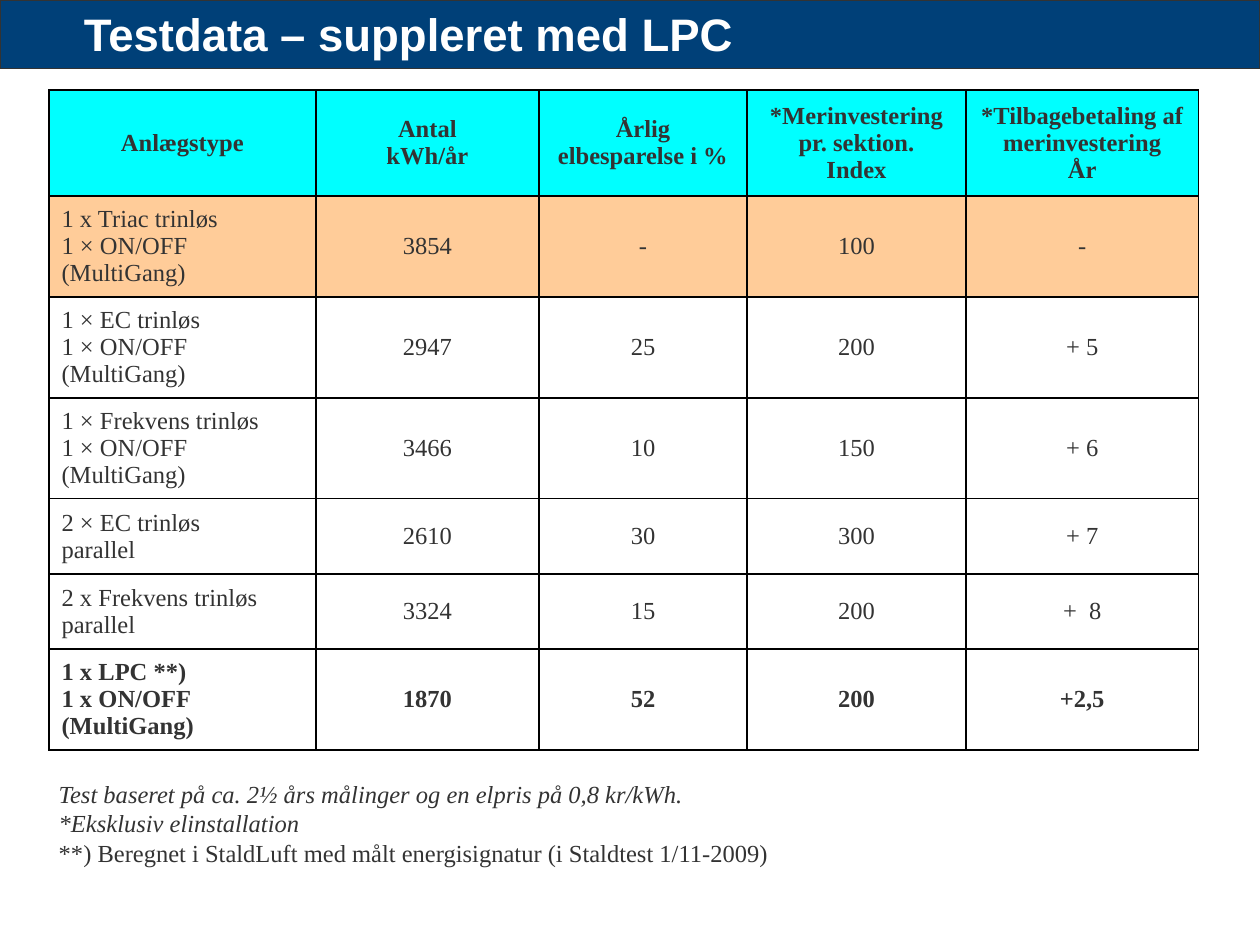
from dataclasses import dataclass

from lxml.etree import SubElement
from pptx import Presentation
from pptx.dml.color import RGBColor
from pptx.enum.shapes import MSO_SHAPE
from pptx.enum.text import MSO_ANCHOR, PP_ALIGN
from pptx.oxml.ns import qn
from pptx.util import Pt


@dataclass(frozen=True)
class Theme:
    navy: str = "004078"
    ink: str = "333333"
    white: str = "FFFFFF"
    header: str = "00FFFF"
    baseline: str = "FFCC99"
    border: str = "000000"
    title_font: str = "Arial"
    body_font: str = "Times New Roman"
    title_size: int = 26
    body_size: int = 14


theme = Theme()


def style_text(para, font, size, color, bold=False, italic=False):
    for span in para.runs:
        span.font.name = font
        span.font.size = Pt(size)
        span.font.color.rgb = RGBColor.from_string(color)
        span.font.bold = bold
        span.font.italic = italic


def add_borders(cell):
    properties = cell._tc.get_or_add_tcPr()
    for position, edge in enumerate(("a:lnL", "a:lnR", "a:lnT", "a:lnB")):
        line = SubElement(properties, qn(edge), w=str(Pt(1)))
        fill = SubElement(line, qn("a:solidFill"))
        SubElement(fill, qn("a:srgbClr"), val=theme.border)
        properties.remove(line)
        properties.insert(position, line)


deck = Presentation()
deck.slide_width = Pt(720)
deck.slide_height = Pt(540)
page = deck.slides.add_slide(deck.slide_layouts[6])

banner = page.shapes.add_shape(MSO_SHAPE.RECTANGLE, Pt(0), Pt(0), Pt(720), Pt(39))
banner.shadow.inherit = False
banner.fill.solid()
banner.fill.fore_color.rgb = RGBColor.from_string(theme.navy)
banner.line.color.rgb = RGBColor.from_string(theme.ink)
banner.line.width = Pt(0.75)

title_box = page.shapes.add_textbox(Pt(48), Pt(7), Pt(648), Pt(32))
title_frame = title_box.text_frame
title_frame.word_wrap = True
title_frame.margin_left = title_frame.margin_right = Pt(0)
title_frame.margin_top = title_frame.margin_bottom = Pt(0)
title_frame.text = "Testdata – suppleret med LPC"
title_frame.paragraphs[0].line_spacing = 0.9
style_text(title_frame.paragraphs[0], theme.title_font, theme.title_size, theme.white, bold=True)

table_rows = [
    ["Anlægstype", "Antal\nkWh/år", "Årlig elbesparelse i %",
     "*Merinvestering pr. sektion.\nIndex", "*Tilbagebetaling af merinvestering\nÅr"],
    ["1 x Triac trinløs\n1 × ON/OFF (MultiGang)", "3854", "-", "100", "-"],
    ["1 × EC trinløs\n1 × ON/OFF (MultiGang)", "2947", "25", "200", "+ 5"],
    ["1 × Frekvens trinløs\n1 × ON/OFF (MultiGang)", "3466", "10", "150", "+ 6"],
    ["2 × EC trinløs\nparallel", "2610", "30", "300", "+ 7"],
    ["2 x Frekvens trinløs parallel", "3324", "15", "200", "+  8"],
    ["1 x LPC **)\n1 x ON/OFF (MultiGang)", "1870", "52", "200", "+2,5"],
]
column_widths = [152.5, 127.5, 119, 125, 133]
row_heights = [60.5, 54.7, 54.7, 54.7, 43, 43, 43]
row_fills = {0: theme.header, 1: theme.baseline}
bold_rows = (0, len(table_rows) - 1)

table = page.shapes.add_table(
    len(table_rows), len(column_widths), Pt(28), Pt(51.5),
    Pt(sum(column_widths)), Pt(sum(row_heights)),
).table
table.horz_banding = False
for column, width in zip(table.columns, column_widths):
    column.width = Pt(width)
for row, height in zip(table.rows, row_heights):
    row.height = Pt(height)

for row_index, values in enumerate(table_rows):
    for column_index, value in enumerate(values):
        cell = table.cell(row_index, column_index)
        cell.text_frame.text = value
        cell.vertical_anchor = MSO_ANCHOR.MIDDLE
        if row_index in row_fills:
            cell.fill.solid()
            cell.fill.fore_color.rgb = RGBColor.from_string(row_fills[row_index])
        else:
            cell.fill.background()
        add_borders(cell)
        centred = row_index == 0 or column_index > 0
        for para in cell.text_frame.paragraphs:
            para.alignment = PP_ALIGN.CENTER if centred else PP_ALIGN.LEFT
            style_text(para, theme.body_font, theme.body_size, theme.ink, bold=row_index in bold_rows)

footnotes = [
    ("Test baseret på ca. 2½ års målinger og en elpris på 0,8 kr/kWh.", True),
    ("*Eksklusiv elinstallation", True),
    ("**) Beregnet i StaldLuft med målt energisignatur (i Staldtest 1/11-2009)", False),
]
footnote_box = page.shapes.add_textbox(Pt(26.5), Pt(441.5), Pt(654), Pt(75))
footnote_frame = footnote_box.text_frame
footnote_frame.word_wrap = True
footnote_frame.text = "\n".join(text for text, italic in footnotes)
for para, (text, italic) in zip(footnote_frame.paragraphs, footnotes):
    style_text(para, theme.body_font, theme.body_size, theme.ink, italic=italic)

deck.save("out.pptx")
